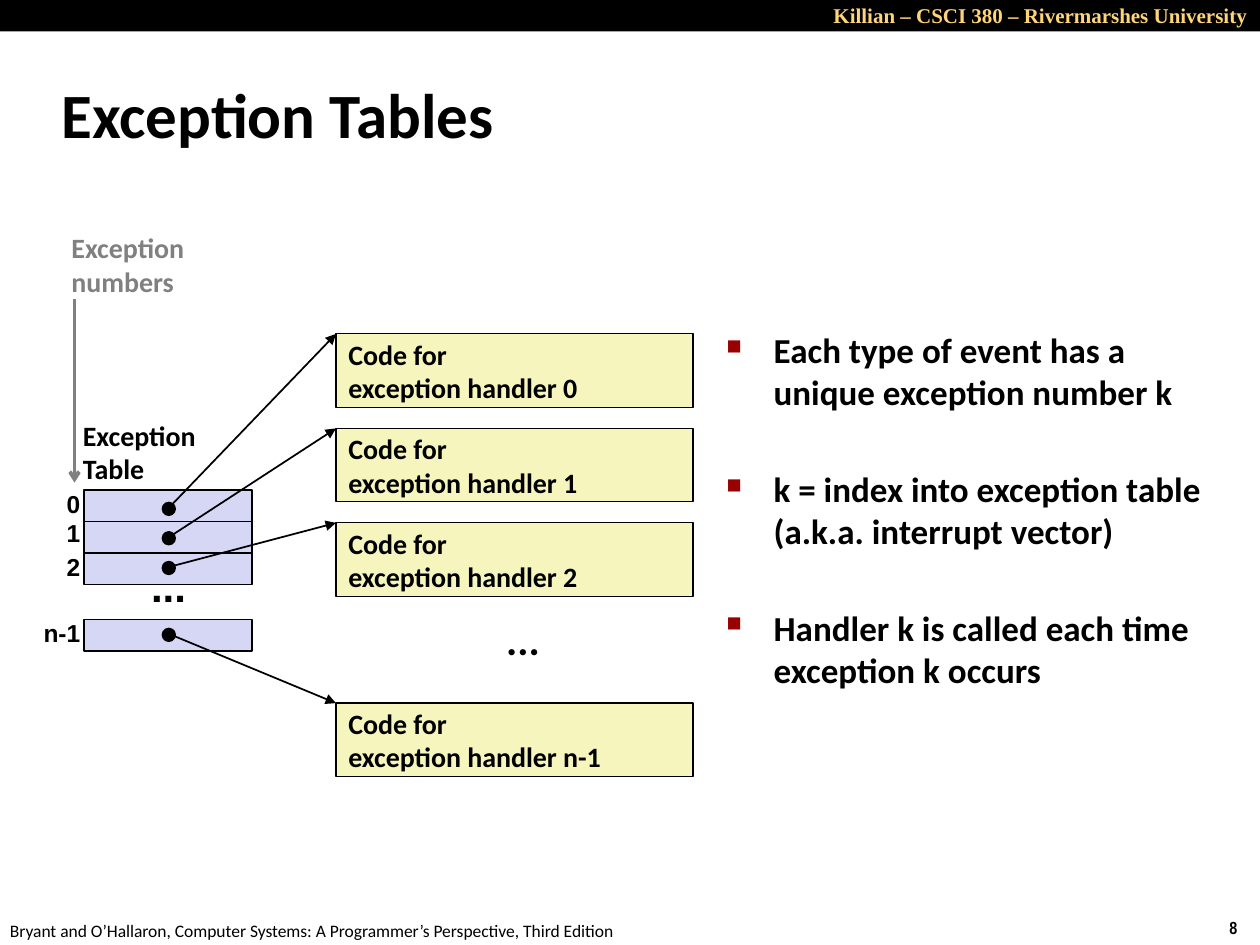
import dataclasses

import lxml.etree
import pptx
import pptx.dml.color
import pptx.enum.shapes
import pptx.enum.text
import pptx.oxml.ns
import pptx.util

Pt = pptx.util.Pt
Align = pptx.enum.text.PP_ALIGN
Anchor = pptx.enum.text.MSO_ANCHOR
Shape = pptx.enum.shapes.MSO_SHAPE


@dataclasses.dataclass(frozen=True)
class Theme:
    black: str = "000000"
    gray: str = "808080"
    gold: str = "FFD579"
    table_fill: str = "D6D6F5"
    handler_fill: str = "F6F5BD"
    bullet: str = "990000"
    body_font: str = "Calibri"
    index_font: str = "Arial"
    number_font: str = "Arial Narrow"
    banner_font: str = "Times New Roman"
    title_size: int = 36
    dots_size: int = 24
    body_size: int = 20
    label_size: int = 16
    index_size: int = 14
    banner_size: int = 12
    footer_size: int = 10


def rgb(value):
    return pptx.dml.color.RGBColor.from_string(value)


def add_element(parent, tag, **attributes):
    return lxml.etree.SubElement(parent, pptx.oxml.ns.qn(tag), attributes)


class SlideBuilder:
    def __init__(self, slide, theme):
        self.slide = slide
        self.theme = theme

    def set_text(self, shape, lines, size, font=None, color=None, bold=True,
                 align=Align.LEFT, anchor=Anchor.TOP, wrap=False):
        frame = shape.text_frame
        frame.word_wrap = wrap
        frame.vertical_anchor = anchor
        frame.text = "\n".join(lines)
        for paragraph in frame.paragraphs:
            paragraph.alignment = align
            paragraph.font.size = Pt(size)
            paragraph.font.name = font or self.theme.body_font
            paragraph.font.bold = bold
            paragraph.font.color.rgb = rgb(color or self.theme.black)
        return frame

    def text(self, left, top, width, height, lines, size, **style):
        shape = self.slide.shapes.add_textbox(
            Pt(left), Pt(top), Pt(width), Pt(height))
        return self.set_text(shape, lines, size, **style)

    def shape(self, kind, left, top, width, height, fill, line_width=1):
        shape = self.slide.shapes.add_shape(
            kind, Pt(left), Pt(top), Pt(width), Pt(height))
        shape.shadow.inherit = False
        shape.fill.solid()
        shape.fill.fore_color.rgb = rgb(fill)
        if line_width:
            shape.line.color.rgb = rgb(self.theme.black)
            shape.line.width = Pt(line_width)
        else:
            shape.line.fill.background()
        return shape

    def arrow(self, x1, y1, x2, y2, color, width, head):
        connector = self.slide.shapes.add_connector(
            pptx.enum.shapes.MSO_CONNECTOR.STRAIGHT,
            Pt(x1), Pt(y1), Pt(x2), Pt(y2))
        connector.line.color.rgb = rgb(color)
        connector.line.width = Pt(width)
        properties = connector._element.spPr
        add_element(properties.find(pptx.oxml.ns.qn("a:ln")),
                    "a:tailEnd", type=head)
        add_element(properties, "a:effectLst")

    def bullets(self, left, top, width, height, items, indent, gap):
        frame = self.text(left, top, width, height, items,
                          self.theme.body_size, wrap=True)
        for index, paragraph in enumerate(frame.paragraphs):
            paragraph.space_before = Pt(gap if index else 0)
            properties = paragraph._p.get_or_add_pPr()
            properties.set("marL", str(Pt(indent)))
            properties.set("indent", str(-Pt(indent)))
            font_properties = properties.find(pptx.oxml.ns.qn("a:defRPr"))
            color = add_element(properties, "a:buClr")
            add_element(color, "a:srgbClr", val=self.theme.bullet)
            add_element(properties, "a:buSzPct", val="60000")
            add_element(properties, "a:buChar", char="■")
            properties.append(font_properties)  # must follow the bullet


def main():
    presentation = pptx.Presentation()
    presentation.slide_width, presentation.slide_height = Pt(720), Pt(540)
    slide = presentation.slides.add_slide(presentation.slide_layouts[6])
    theme = Theme()
    builder = SlideBuilder(slide, theme)

    # Banner, footer and title
    builder.shape(Shape.RECTANGLE, 0, 0, 720, 18, theme.black, line_width=0)
    builder.text(420, -2.2, 300, 21.6,
                 ["Killian – CSCI 380 – Rivermarshes University"],
                 theme.banner_size, font=theme.banner_font,
                 color=theme.gold, align=Align.RIGHT, wrap=True)
    builder.text(695.5, 520.6, 24.5, 19.4, ["8"], theme.footer_size,
                 font=theme.number_font)
    builder.text(-1.4, 522, 366, 19.4,
                 ["Bryant and O’Hallaron, Computer Systems: "
                  "A Programmer’s Perspective, Third Edition"],
                 theme.footer_size, bold=False)
    builder.text(28, 34.6, 598, 60, ["Exception Tables"], theme.title_size,
                 anchor=Anchor.MIDDLE, wrap=True)

    # Table rows: index, row top, label top, dot top, handler top
    entries = [
        ("0", 280, 275.8, 287.2, 190.8),
        ("1", 298, 292.3, 304, 244.8),
        ("2", 316, 311.8, 321, 298.8),
        ("n-1", 354, 349.9, 359.2, 401.8),
    ]
    table_left, handler_left, dot_size = 48, 192, 7.2
    dot_center = table_left + 96 / 2 + 0.5
    for index, row_top, label_top, dot_top, handler_top in entries:
        builder.shape(Shape.RECTANGLE, table_left, row_top, 96, 18,
                      theme.table_fill)
        builder.text(17.6, label_top, 35.4, 23.8, [index], theme.index_size,
                     font=theme.index_font, align=Align.RIGHT,
                     anchor=Anchor.MIDDLE)
        builder.shape(Shape.OVAL, dot_center - dot_size / 2, dot_top,
                      dot_size, dot_size, theme.black)
        handler = builder.shape(Shape.RECTANGLE, handler_left, handler_top,
                                204, 42, theme.handler_fill, line_width=0.75)
        builder.set_text(handler, ["Code for", f"exception handler {index}"],
                         theme.label_size, anchor=Anchor.MIDDLE, wrap=True)
        builder.arrow(dot_center, dot_top + 3, handler_left, handler_top,
                      theme.black, 1, "triangle")

    # Ellipses for the omitted rows and handlers
    for left, top, font in ((79.2, 316.8, theme.index_font),
                            (282.2, 347, theme.body_font)):
        builder.text(left, top, 34.6, 36, ["..."], theme.dots_size,
                     font=font, anchor=Anchor.MIDDLE)

    # Table captions and the exception number arrow
    builder.text(40.3, 235.4, 80, 46, ["Exception", "Table"],
                 theme.label_size)
    builder.text(33.8, 128.2, 83.5, 46, ["Exception", "numbers"],
                 theme.label_size, color=theme.gray)
    builder.arrow(42.6, 170.8, 42.6, 275.8, theme.gray, 2, "arrow")

    # Explanation
    builder.bullets(408, 184.3, 300, 253.4, [
        "Each type of event has a\vunique exception number k",
        "k = index into exception table\v(a.k.a. interrupt vector)",
        "Handler k is called each time\vexception k occurs",
    ], indent=27, gap=31.2)

    presentation.save("out.pptx")


if __name__ == "__main__":
    main()
